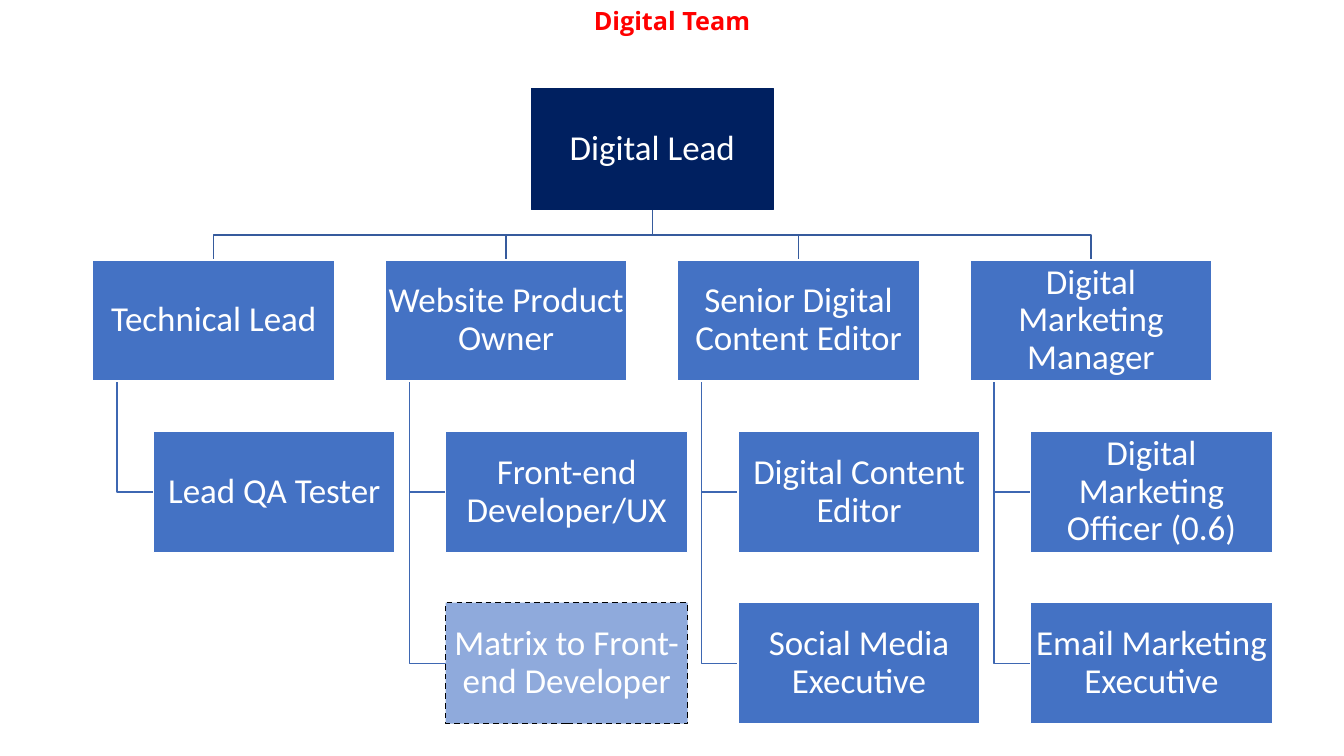
from pptx import Presentation
from pptx.dml.color import RGBColor
from pptx.enum.dml import MSO_LINE
from pptx.enum.shapes import MSO_SHAPE
from pptx.enum.text import MSO_ANCHOR, PP_ALIGN
from pptx.util import Inches, Pt

RECT = MSO_SHAPE.RECTANGLE
DASH = MSO_LINE.DASH
MIDDLE = MSO_ANCHOR.MIDDLE
CENTER = PP_ALIGN.CENTER

RED = RGBColor(0xFF, 0x00, 0x00)
NAVY = RGBColor(0x00, 0x20, 0x60)
BLUE = RGBColor(0x44, 0x72, 0xC4)
PALE = RGBColor(0x8F, 0xAA, 0xDC)
WHITE = RGBColor(0xFF, 0xFF, 0xFF)
BLACK = RGBColor(0x00, 0x00, 0x00)
TOP_LINE = RGBColor(0x36, 0x5B, 0x9D)
SUB_LINE = RGBColor(0x3E, 0x67, 0xB2)

CARD_W, CARD_H = 2.4, 1.2
COL_STEP, ROW_STEP = 2.9, 1.7
INDENT = 0.6   # shift of a report's card from its manager's
TRUNK = 0.24   # from a manager's left edge to the line below
MATRIX = "Matrix to Front-end Developer"
LEAD = "Digital Lead"
TEAMS = [
    ("Technical Lead", ["Lead QA Tester"]),
    ("Website Product Owner", ["Front-end Developer/UX", MATRIX]),
    ("Senior Digital Content Editor",
     ["Digital Content Editor", "Social Media Executive"]),
    ("Digital Marketing Manager",
     ["Digital Marketing Officer (0.6)", "Email Marketing Executive"]),
]


def set_text(shape, text, font, size, color, bold=False):
    frame = shape.text_frame
    frame.text = text
    frame.word_wrap = True
    frame.vertical_anchor = MIDDLE
    para = frame.paragraphs[0]
    para.alignment = CENTER
    para.line_spacing = 0.9
    style = para.runs[0].font
    style.name, style.size, style.bold = font, Pt(size), bold
    style.color.rgb = color


def add_title(slide, left, top, width, height):
    box = slide.shapes.add_textbox(
        Inches(left), Inches(top), Inches(width), Inches(height))
    set_text(box, "Digital Team", "Open Sans", 18, RED, True)


def add_card(slide, left, top, text, fill=BLUE, edge=WHITE, dash=None):
    card = slide.shapes.add_shape(
        RECT, Inches(left), Inches(top), Inches(CARD_W), Inches(CARD_H))
    card.shadow.inherit = False
    card.fill.solid()
    card.fill.fore_color.rgb = fill
    card.line.color.rgb = edge
    card.line.width = Pt(1)
    card.line.dash_style = dash
    frame = card.text_frame
    frame.margin_left = frame.margin_right = Inches(0.02)
    frame.margin_top = frame.margin_bottom = Inches(0.02)
    set_text(card, text, "Calibri", 25, WHITE)


def add_path(slide, points, color):
    """Draw an open line with square bends through the points."""
    start, *rest = [(Inches(x), Inches(y)) for x, y in points]
    pen = slide.shapes.build_freeform(*start)
    pen.add_line_segments(rest, close=False)
    path = pen.convert_to_shape()
    path.shadow.inherit = False
    path.fill.background()
    path.line.color.rgb = color
    path.line.width = Pt(1)


def add_team(slide, left, top, boss, staff):
    """Draw a manager's card with the reports hanging below it."""
    spots = [(top + ROW_STEP * row, name)
             for row, name in enumerate(staff, 1)]
    x = left + TRUNK
    for y, _ in spots:
        mid = y + CARD_H / 2
        add_path(slide, [(x, top + CARD_H), (x, mid), (left + INDENT, mid)],
                 SUB_LINE)
    add_card(slide, left, top, boss)
    for y, name in spots:
        look = (PALE, BLACK, DASH) if name == MATRIX else ()
        add_card(slide, left + INDENT, y, name, *look)


def add_chart(slide, left, top):
    """Draw the lead's card centred above the row of teams."""
    lefts = [left + COL_STEP * col for col in range(len(TEAMS))]
    lead = (lefts[0] + lefts[-1]) / 2
    mid = lead + CARD_W / 2
    base, row = top + CARD_H, top + ROW_STEP
    bend = (base + row) / 2
    for x in lefts:
        end = x + CARD_W / 2
        add_path(slide, [(mid, base), (mid, bend), (end, bend), (end, row)],
                 TOP_LINE)
    add_card(slide, lead, top, LEAD, NAVY, NAVY)
    for x, (boss, staff) in zip(lefts, TEAMS):
        add_team(slide, x, row, boss, staff)


def main():
    deck = Presentation()
    deck.slide_width, deck.slide_height = Inches(13.33), Inches(7.5)
    slide = deck.slides.add_slide(deck.slide_layouts[6])
    add_title(slide, 0, 0.03, 13.33, 0.39)
    add_chart(slide, 0.92, 0.88)
    deck.save("out.pptx")


if __name__ == "__main__":
    main()
